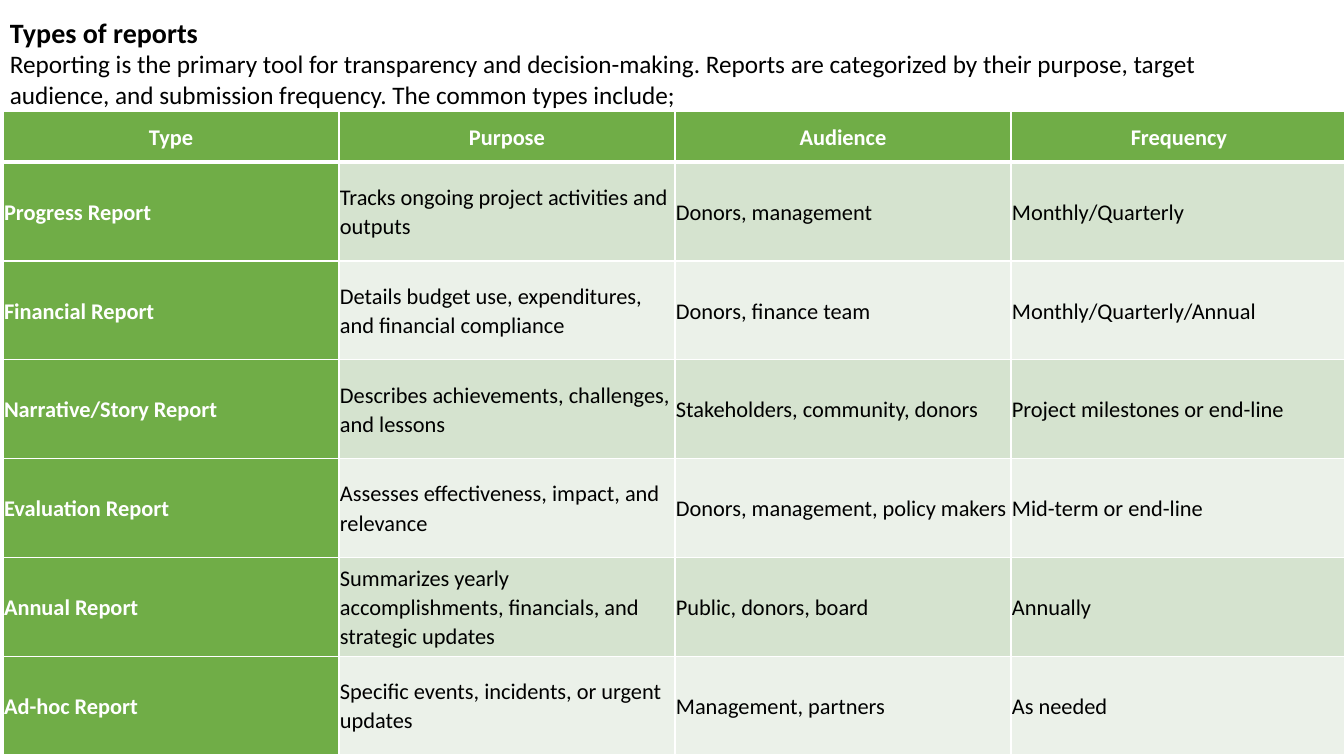
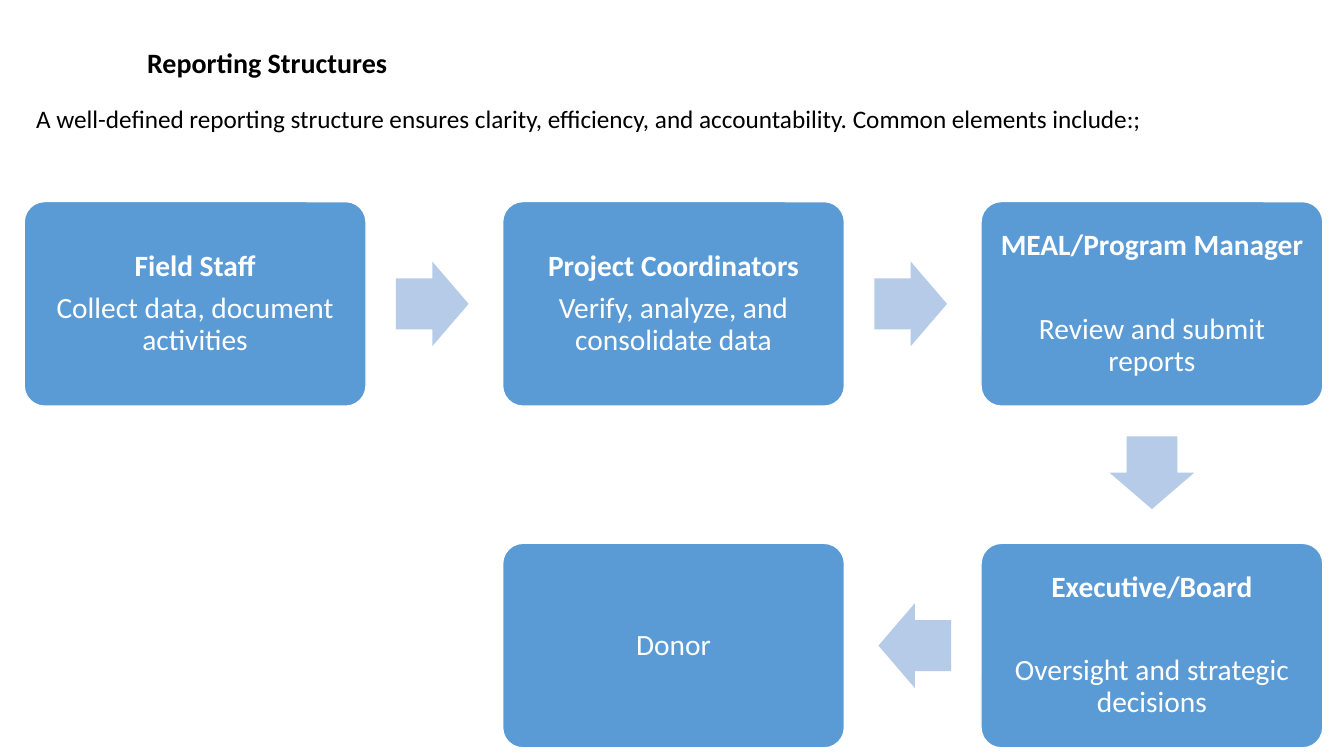
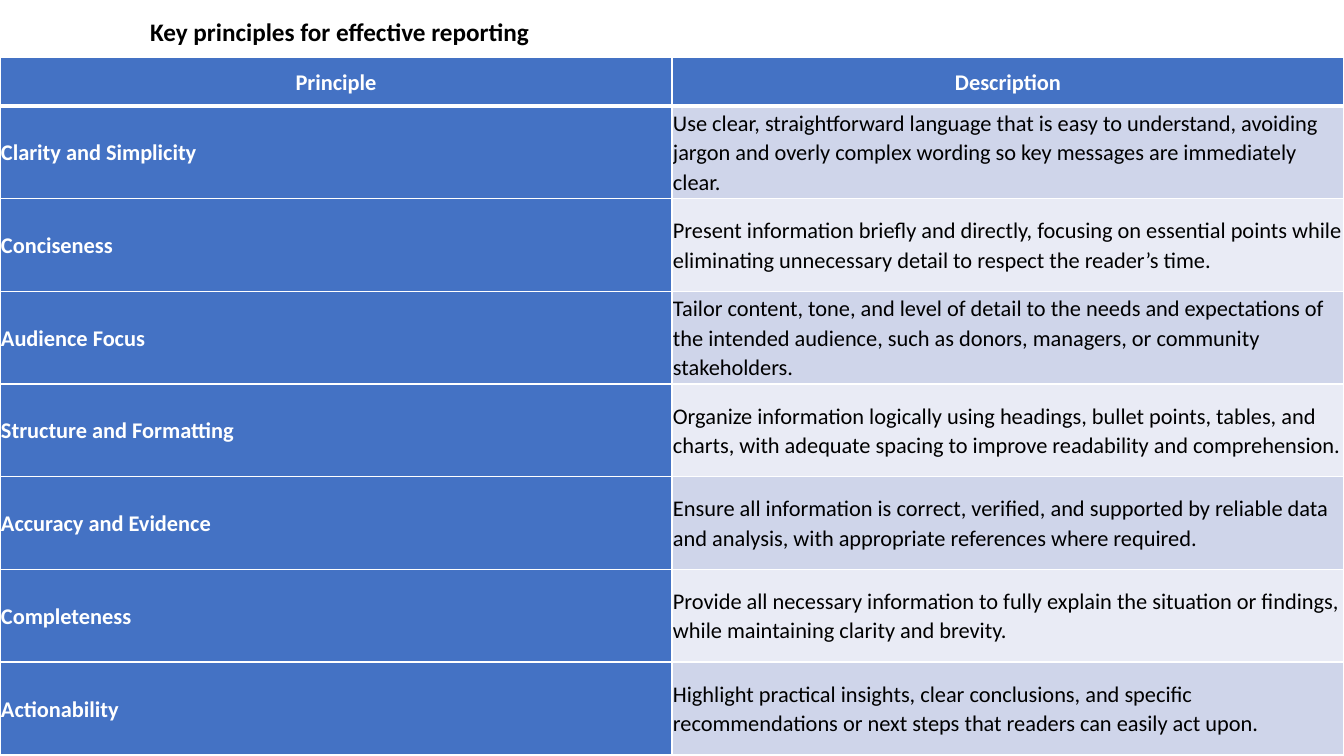
import math

import lxml.etree
import pptx
import pptx.dml.color
import pptx.enum.shapes
import pptx.enum.text
import pptx.oxml.ns
import pptx.util

Inches = pptx.util.Inches
Pt = pptx.util.Pt
ALIGN = pptx.enum.text.PP_ALIGN
MIDDLE = pptx.enum.text.MSO_ANCHOR.MIDDLE
SHAPE = pptx.enum.shapes.MSO_SHAPE

FONT = "Calibri"
BLACK, WHITE = "000000", "FFFFFF"
BOX_BLUE, ARROW_BLUE = "5B9BD5", "B5CBE7"
# Table themes: heading fill, then the two alternating row fills
GREEN = ("70AD47", "D5E3CF", "EBF1E9")
BLUE = ("4472C4", "CFD5EA", "E9EBF5")


def rgb(color):
    return pptx.dml.color.RGBColor.from_string(color)


class Deck:
    def __init__(self):
        self.prs = pptx.Presentation()
        self.prs.slide_width = Inches(13.33)
        self.prs.slide_height = Inches(7.5)
        self.s = None

    def new_slide(self):
        self.s = self.prs.slides.add_slide(self.prs.slide_layouts[6])

    def style(self, p, size, color, bold=False, align=ALIGN.LEFT, spacing=1.0):
        p.alignment = align
        p.line_spacing = spacing
        p.font.name = FONT
        p.font.size = Pt(size)
        p.font.bold = bold
        p.font.color.rgb = rgb(color)

    def text(self, x, y, w, h, lines):
        """Add a text box; each line is (text, size, bold)."""
        sp = self.s.shapes.add_textbox(Inches(x), Inches(y), Inches(w), Inches(h))
        tf = sp.text_frame
        tf.word_wrap = True
        for i, (text, size, bold) in enumerate(lines):
            p = tf.add_paragraph() if i else tf.paragraphs[0]
            p.text = text
            self.style(p, size, BLACK, bold)

    def shape(self, kind, x, y, w, h, fill, adjustments):
        sp = self.s.shapes.add_shape(kind, Inches(x), Inches(y), Inches(w), Inches(h))
        sp.shadow.inherit = False
        sp.fill.solid()
        sp.fill.fore_color.rgb = rgb(fill)
        sp.line.fill.background()
        for i, value in enumerate(adjustments):
            sp.adjustments[i] = value
        return sp

    def box(self, x, y, w, h, heading, detail, gap):
        sp = self.shape(SHAPE.ROUNDED_RECTANGLE, x, y, w, h, BOX_BLUE, [0.1])
        sp.line.color.rgb = rgb(WHITE)
        sp.line.width = Pt(1)
        tf = sp.text_frame
        tf.word_wrap = True
        tf.vertical_anchor = MIDDLE
        tf.margin_left = tf.margin_right = Inches(0.09)
        tf.margin_top = tf.margin_bottom = Inches(0.09)
        p = tf.paragraphs[0]
        if heading:
            p.text = heading
            self.style(p, 21, WHITE, True, ALIGN.CENTER, 0.9)
            p.space_after = Pt(gap)
            p = tf.add_paragraph()
        p.text = detail
        self.style(p, 21, WHITE, False, ALIGN.CENTER, 0.9)

    def arrow(self, cx, cy, angle):
        w, h = 0.72, 0.84
        sp = self.shape(SHAPE.RIGHT_ARROW, cx - w / 2, cy - h / 2, w, h,
                        ARROW_BLUE, [0.6, 0.5])
        sp.rotation = angle

    def border(self, cell, side, width):
        tcPr = cell._tc.get_or_add_tcPr()
        ln = lxml.etree.SubElement(tcPr, pptx.oxml.ns.qn("a:ln" + side), w=str(Pt(width)))
        fill = lxml.etree.SubElement(ln, pptx.oxml.ns.qn("a:solidFill"))
        lxml.etree.SubElement(fill, pptx.oxml.ns.qn("a:srgbClr"), val=WHITE)

    def table(self, x, y, head_h, row_h, rows, theme):
        head, *bands = theme
        n_rows, n_cols = len(rows), len(rows[0])
        height = head_h + row_h * (n_rows - 1)
        table = self.s.shapes.add_table(n_rows, n_cols, Inches(x), Inches(y),
                                        Inches(13.33), Inches(height)).table
        for i, row in enumerate(rows):
            table.rows[i].height = Inches(row_h if i else head_h)
            for j, text in enumerate(row):
                cell = table.cell(i, j)
                # The rule under the header row is thicker
                for side, thick in (("L", False), ("R", False), ("T", i == 1), ("B", i == 0)):
                    self.border(cell, side, 3 if thick else 1)
                is_head = i == 0 or j == 0
                cell.fill.solid()
                cell.fill.fore_color.rgb = rgb(head if is_head else bands[(i - 1) % 2])
                cell.vertical_anchor = MIDDLE
                cell.margin_left = cell.margin_right = Inches(0.01)
                cell.margin_top = cell.margin_bottom = Inches(0.01)
                p = cell.text_frame.paragraphs[0]
                p.text = text
                self.style(p, 16, WHITE if is_head else BLACK, is_head,
                           ALIGN.LEFT if i else ALIGN.CENTER, 1.07)


def report_types(deck):
    deck.new_slide()
    deck.text(0, 0.1, 12.59, 1.04, [
        ("Types of reports", 20, True),
        ("Reporting is the primary tool for transparency and decision-making. Reports are "
         "categorized by their purpose, target audience, and submission frequency. "
         "The common types include;", 18, False),
    ])
    deck.table(0.03, 1.11, 0.5, 0.98, [
        ("Type", "Purpose", "Audience", "Frequency"),
        ("Progress Report", "Tracks ongoing project activities and outputs",
         "Donors, management", "Monthly/Quarterly"),
        ("Financial Report", "Details budget use, expenditures, and financial compliance",
         "Donors, finance team", "Monthly/Quarterly/Annual"),
        ("Narrative/Story Report", "Describes achievements, challenges, and lessons",
         "Stakeholders, community, donors", "Project milestones or end-line"),
        ("Evaluation Report", "Assesses effectiveness, impact, and relevance",
         "Donors, management, policy makers", "Mid-term or end-line"),
        ("Annual Report", "Summarizes yearly accomplishments, financials, and strategic updates",
         "Public, donors, board", "Annually"),
        ("Ad-hoc Report", "Specific events, incidents, or urgent updates",
         "Management, partners", "As needed"),
    ], GREEN)


def reporting_structures(deck):
    deck.new_slide()
    deck.text(1.36, 0.4, 4.02, 0.74, [("Reporting Structures", 20, True)])
    deck.text(0.26, 0.98, 12.59, 0.4, [
        ("A well-defined reporting structure ensures clarity, efficiency, and "
         "accountability. Common elements include:;", 18, False),
    ])
    # Steps: grid column, grid row, heading, detail, gap after heading
    steps = [
        (0, 0, "Field Staff", "Collect data, document activities", 7),
        (1, 0, "Project Coordinators", "Verify, analyze, and consolidate data", 7),
        (2, 0, "MEAL/Program Manager", "Review and submit reports", 37),
        (2, 1, "Executive/Board", "Oversight and strategic decisions", 37),
        (1, 1, "", "Donor", 0),
    ]
    w, h = 3.39, 2.03
    left, top = 0.24, 2
    pitch_x, pitch_y = (9.73 - left) / 2, 3.39
    for col, row, heading, detail, gap in steps:
        deck.box(left + col * pitch_x, top + row * pitch_y, w, h, heading, detail, gap)
    # Arrows sit between neighbouring steps, slightly nearer the first
    for (c1, r1, *_), (c2, r2, *_) in zip(steps, steps[1:]):
        dx, dy = c2 - c1, r2 - r1
        cx = left + w / 2 + pitch_x * (c1 + c2) / 2 - 0.02 * dx
        cy = top + h / 2 + pitch_y * (r1 + r2) / 2 - 0.02 * dy
        deck.arrow(cx, cy, math.degrees(math.atan2(dy, dx)))


def key_principles(deck):
    deck.new_slide()
    deck.text(1.39, 0.11, 4.02, 0.71, [("Key principles for effective reporting", 18, True)])
    deck.table(0, 0.57, 0.48, 0.92, [
        ("Principle", "Description"),
        ("Clarity and Simplicity",
         "Use clear, straightforward language that is easy to understand, avoiding jargon and "
         "overly complex wording so key messages are immediately clear."),
        ("Conciseness",
         "Present information briefly and directly, focusing on essential points while "
         "eliminating unnecessary detail to respect the reader’s time."),
        ("Audience Focus",
         "Tailor content, tone, and level of detail to the needs and expectations of the "
         "intended audience, such as donors, managers, or community stakeholders."),
        ("Structure and Formatting",
         "Organize information logically using headings, bullet points, tables, and charts, "
         "with adequate spacing to improve readability and comprehension."),
        ("Accuracy and Evidence",
         "Ensure all information is correct, verified, and supported by reliable data and "
         "analysis, with appropriate references where required."),
        ("Completeness",
         "Provide all necessary information to fully explain the situation or findings, while "
         "maintaining clarity and brevity."),
        ("Actionability",
         "Highlight practical insights, clear conclusions, and specific recommendations or "
         "next steps that readers can easily act upon."),
    ], BLUE)


def main():
    deck = Deck()
    report_types(deck)
    reporting_structures(deck)
    key_principles(deck)
    deck.prs.save("out.pptx")


if __name__ == "__main__":
    main()
